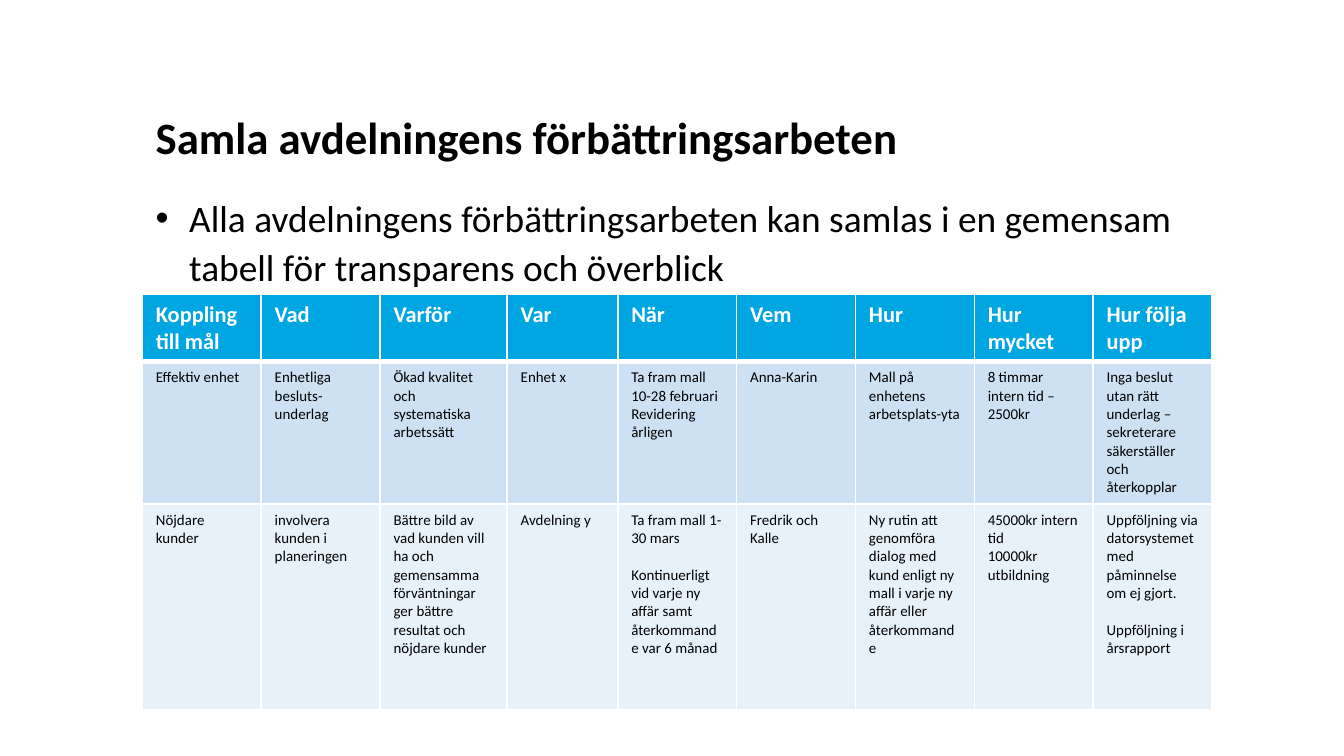
from lxml.etree import SubElement
from pptx import Presentation
from pptx.dml.color import RGBColor as Color
from pptx.enum.text import MSO_ANCHOR as Anchor
from pptx.oxml.ns import qn
from pptx.util import Inches, Pt

COLORS = {
    "text": "000000",
    "header": "00A6E2",
    "odd": "CCE1F4",
    "even": "E7F1FA",
    "white": "FFFFFF",
}
GRID_COLUMNS, GRID_ROWS = 100, 56.25

HEADINGS = ["Koppling till mål", "Vad", "Varför", "Var", "När", "Vem", "Hur",
            "Hur mycket", "Hur följa upp"]
EFFICIENT_UNIT = [
    "Effektiv enhet",
    "Enhetliga besluts-underlag",
    "Ökad kvalitet och systematiska arbetssätt",
    "Enhet x",
    "Ta fram mall 10-28 februari\nRevidering årligen",
    "Anna-Karin",
    "Mall på enhetens arbetsplats-yta",
    "8 timmar intern tid – 2500kr",
    "Inga beslut utan rätt underlag – sekreterare säkerställer och återkopplar",
]
HAPPIER_CUSTOMERS = [
    "Nöjdare kunder",
    "involvera kunden i planeringen",
    "Bättre bild av vad kunden vill ha och gemensamma förväntningar "
    "ger bättre resultat och nöjdare kunder",
    "Avdelning y",
    "Ta fram mall 1-30 mars\n"
    "Kontinuerligt vid varje ny affär samt återkommande var 6 månad",
    "Fredrik och Kalle",
    "Ny rutin att genomföra dialog med kund enligt ny mall i varje ny "
    "affär eller återkommande",
    "45000kr intern tid\n10000kr utbildning",
    "Uppföljning via datorsystemet med påminnelse om ej gjort.\n"
    "Uppföljning i årsrapport",
]
SPACED_CELLS = {(2, 4), (2, 8)}
COLUMN_WEIGHTS = [1, 1, 1.07, 0.93, 1, 1, 1, 1, 1]
ROW_HEIGHTS = [5, 10.6, 15.3]


def write_text(frame, text, size, color="text", bold=False, font="Calibri",
               line_spacing=1.0, gap=0, bullet=False):
    frame.word_wrap = True
    for index, line in enumerate(text.split("\n")):
        para = frame.paragraphs[0] if index == 0 else frame.add_paragraph()
        if bullet:
            properties = para._p.get_or_add_pPr()
            properties.set("marL", str(Inches(0.25)))
            properties.set("indent", str(-Inches(0.25)))
            SubElement(properties, qn("a:buFont"), typeface="Arial")
            SubElement(properties, qn("a:buChar"), char="•")
        para.line_spacing = line_spacing
        if index and gap:
            para.space_before = Pt(gap)
        span = para.add_run()
        span.text = line
        span.font.name = font
        span.font.size = Pt(size)
        span.font.bold = bold
        span.font.color.rgb = Color.from_string(COLORS[color])


class SlideBuilder:
    def __init__(self, deck):
        self.page = deck.slides.add_slide(deck.slide_layouts[6])
        self.column = deck.slide_width / GRID_COLUMNS
        self.row = deck.slide_height / GRID_ROWS

    def place(self, left, top, width, height):
        return (round(left * self.column), round(top * self.row),
                round(width * self.column), round(height * self.row))

    def text(self, left, top, width, height, text, **style):
        box = self.page.shapes.add_textbox(*self.place(left, top, width, height))
        box.text_frame.vertical_anchor = Anchor.TOP
        write_text(box.text_frame, text, **style)

    def border(self, cell, bottom):
        properties = cell._tc.get_or_add_tcPr()
        widths = {"a:lnL": 1, "a:lnR": 1, "a:lnT": 1, "a:lnB": bottom}
        for index, (tag, width) in enumerate(widths.items()):
            line = SubElement(properties, qn(tag), w=str(Pt(width)))
            fill = SubElement(line, qn("a:solidFill"))
            SubElement(fill, qn("a:srgbClr"), val=COLORS["white"])
            properties.insert(index, line)

    def table(self, left, top, width, rows, heights, weights):
        area = self.place(left, top, width, sum(heights))
        grid = self.page.shapes.add_table(len(rows), len(weights), *area).table
        for column, weight in zip(grid.columns, weights):
            column.width = round(area[2] * weight / sum(weights))
        fills = ["header", "odd", "even"]
        for r, (texts, height) in enumerate(zip(rows, heights)):
            grid.rows[r].height = round(height * self.row)
            header = r == 0
            for c, text in enumerate(texts):
                cell = grid.cell(r, c)
                cell.fill.solid()
                cell.fill.fore_color.rgb = Color.from_string(COLORS[fills[r]])
                self.border(cell, bottom=3 if header else 1)
                write_text(cell.text_frame, text, size=12 if header else 8,
                           color="white" if header else "text", bold=header,
                           gap=9.8 if (r, c) in SPACED_CELLS else 0)


def main():
    deck = Presentation()
    deck.slide_width = Inches(10)
    deck.slide_height = deck.slide_width * 9 // 16
    slide = SlideBuilder(deck)
    slide.text(10.6, 8.1, 72.4, 5.6, "Samla avdelningens förbättringsarbeten",
               size=24, bold=True, line_spacing=0.9)
    slide.text(10.6, 13.7, 80.7, 29.4,
               "Alla avdelningens förbättringsarbeten kan samlas i en gemensam "
               "tabell för transparens och överblick",
               size=20, line_spacing=1.1, bullet=True)
    slide.table(10.6, 21.9, 79.6, [HEADINGS, EFFICIENT_UNIT, HAPPIER_CUSTOMERS],
                ROW_HEIGHTS, COLUMN_WEIGHTS)
    deck.save("out.pptx")


if __name__ == "__main__":
    main()
